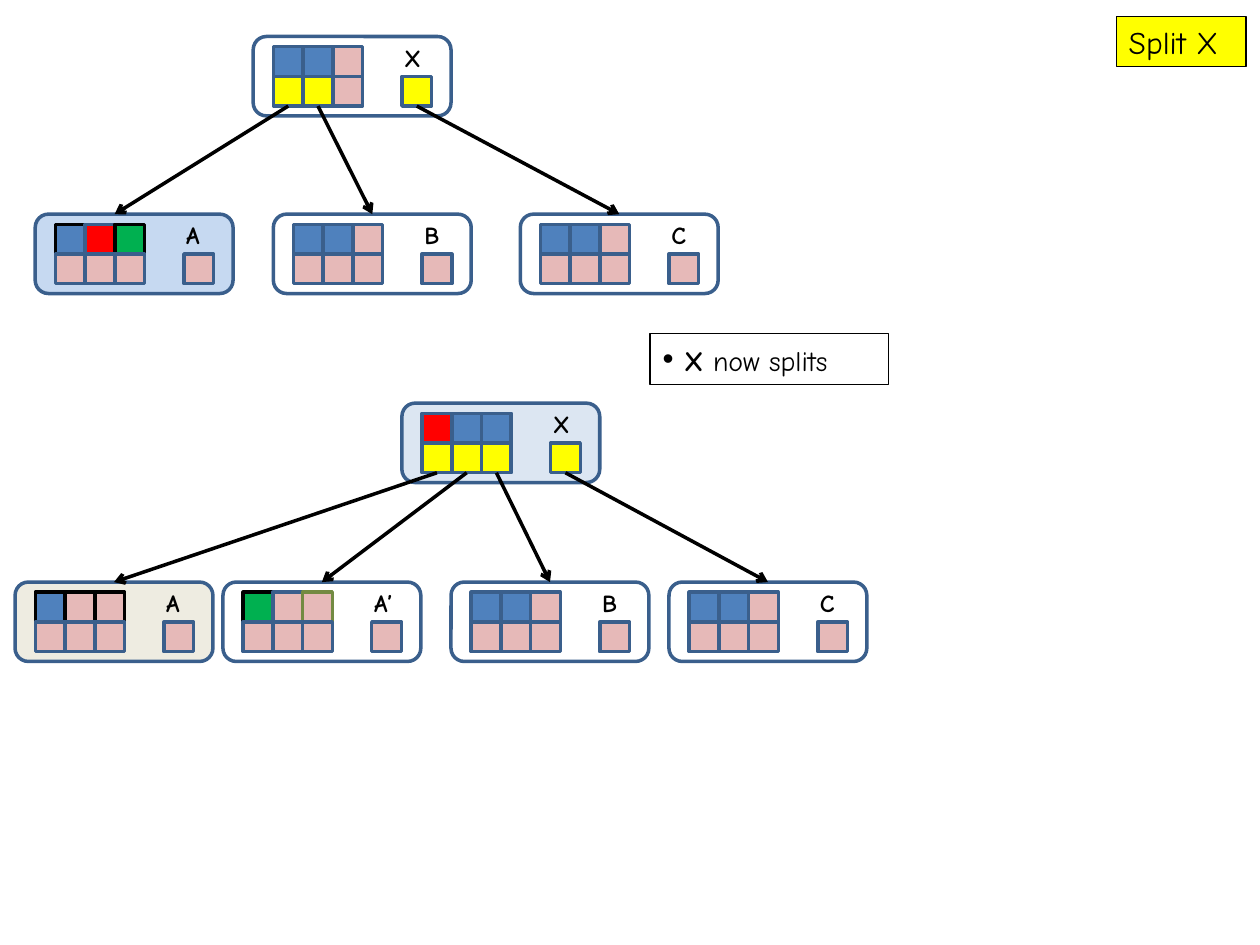
from lxml.etree import SubElement
from pptx import Presentation
from pptx.dml.color import RGBColor
from pptx.enum.shapes import MSO_CONNECTOR, MSO_SHAPE
from pptx.enum.text import MSO_AUTO_SIZE
from pptx.oxml.ns import qn
from pptx.util import Inches, Pt

FONT = "Comic Neue"
BLACK = RGBColor(0x00, 0x00, 0x00)
WHITE = RGBColor(0xFF, 0xFF, 0xFF)
OUTLINE = RGBColor(0x3A, 0x5F, 0x8C)
OLIVE = RGBColor(0x73, 0x8A, 0x42)
YELLOW = RGBColor(0xFF, 0xFF, 0x00)
RED = RGBColor(0xFF, 0x00, 0x00)
GREEN = RGBColor(0x00, 0xB0, 0x50)
BLUE = RGBColor(0x4F, 0x81, 0xBD)
PINK = RGBColor(0xE6, 0xB9, 0xB8)
PALE_BLUE = RGBColor(0xDC, 0xE6, 0xF2)
LIGHT_BLUE = RGBColor(0xC6, 0xD9, 0xF1)
CREAM = RGBColor(0xEE, 0xEC, 0xE1)

CELL = 0.236
NODE_WIDTH, NODE_HEIGHT = 1.57, 0.63
TOP, BOTTOM = 0, 2  # connection sites
ROOT_Y, LEAF_Y = 0.29, 1.7
SPLIT_ROOT_Y, SPLIT_LEAF_Y = 3.2, 4.62

LEAF_KEYS = (BLUE, BLUE, PINK)
EMPTY_ROW = (PINK,) * 3
PLAIN_EDGES = (OUTLINE,) * 3


def add_block(parent, kind, x, y, width, height, fill, edge=OUTLINE):
    block = parent.shapes.add_shape(
        kind, Inches(x), Inches(y), Inches(width), Inches(height))
    block.shadow.inherit = False
    if fill is None:
        block.fill.background()
    else:
        block.fill.solid()
        block.fill.fore_color.rgb = fill
    block.line.color.rgb = edge
    block.line.width = Pt(2)
    return block


def add_cell(parent, x, y, fill, edge=OUTLINE):
    return add_block(parent, MSO_SHAPE.RECTANGLE, x, y, CELL, CELL, fill, edge)


def add_text(parent, x, y, width, height, spans, wrap=False):
    """Add a text box; each span is (text, size, bold)."""
    box = parent.shapes.add_textbox(
        Inches(x), Inches(y), Inches(width), Inches(height))
    box.text_frame.word_wrap = wrap
    box.text_frame.auto_size = MSO_AUTO_SIZE.SHAPE_TO_FIT_TEXT
    for text, size, bold in spans:
        span = box.text_frame.paragraphs[0].add_run()
        span.text = text
        span.font.name = FONT
        span.font.size = Pt(size)
        span.font.bold = bold
        span.font.color.rgb = BLACK
    return box


def frame_box(box, fill):
    box.fill.solid()
    box.fill.fore_color.rgb = fill
    box.line.color.rgb = BLACK
    box.line.width = Pt(0.75)


def add_bullet(paragraph):
    properties = paragraph._p.get_or_add_pPr()
    SubElement(properties, qn("a:buFont"), typeface="Arial")
    SubElement(properties, qn("a:buChar"), char="•")


def add_node(page, name, x, y, keys=LEAF_KEYS, children=EMPTY_ROW,
             fill=None, edges=PLAIN_EDGES, label_width=0.34):
    """Add a tree node; return its outline and its four child pointer cells."""
    group = page.shapes.add_group_shape()
    outline = add_block(group, MSO_SHAPE.ROUNDED_RECTANGLE,
                        x, y, NODE_WIDTH, NODE_HEIGHT, fill)
    for column, (key, edge) in enumerate(zip(keys, edges)):
        add_cell(group, x + 0.16 + column * CELL, y + 0.08, key, edge)
    pointer_y = y + 0.08 + CELL
    pointers = [add_cell(group, x + 0.16 + column * CELL, pointer_y, child)
                for column, child in enumerate(children)]
    last_fill = YELLOW if YELLOW in children else PINK
    pointers.append(add_cell(group, x + 1.18, pointer_y, last_fill))
    add_text(group, x + 1.1, y, label_width, 0.34, [(name, 14, True)])
    return outline, pointers


def add_arrow(page, pointer, target=None, end=(0, 0)):
    """Point from a cell to the top of a target node, or to a free end."""
    arrow = page.shapes.add_connector(
        MSO_CONNECTOR.STRAIGHT, 0, 0, Inches(end[0]), Inches(end[1]))
    arrow.begin_connect(pointer, BOTTOM)
    if target is not None:
        arrow.end_connect(target, TOP)
    arrow.line.color.rgb = BLACK
    arrow.line.width = Pt(2)
    SubElement(arrow.line._get_or_add_ln(), qn("a:tailEnd"), type="arrow")
    SubElement(arrow._element.spPr, qn("a:effectLst"))


def add_tree_before_split(page):
    _, pointers = add_node(page, "X", 2.01, ROOT_Y, children=(YELLOW, YELLOW, PINK))
    add_node(page, "A", 0.28, LEAF_Y, keys=(BLUE, RED, GREEN),
             fill=LIGHT_BLUE, edges=(BLACK, OUTLINE, BLACK))
    leaf_b, _ = add_node(page, "B", 2.17, LEAF_Y)
    leaf_c, _ = add_node(page, "C", 4.13, LEAF_Y)
    add_arrow(page, pointers[0], end=(0.91, LEAF_Y))
    add_arrow(page, pointers[1], leaf_b)
    add_arrow(page, pointers[3], leaf_c)


def add_tree_after_split(page):
    _, pointers = add_node(page, "X", 3.19, SPLIT_ROOT_Y, keys=(RED, BLUE, BLUE),
                           children=(YELLOW,) * 3, fill=PALE_BLUE)
    leaves = [
        add_node(page, "A", 0.12, SPLIT_LEAF_Y, keys=(BLUE, PINK, PINK),
                 fill=CREAM, edges=(BLACK,) * 3),
        add_node(page, "A’", 1.77, SPLIT_LEAF_Y, keys=(GREEN, PINK, PINK),
                 edges=(BLACK, OUTLINE, OLIVE), label_width=0.39),
        add_node(page, "B", 3.58, SPLIT_LEAF_Y),
        add_node(page, "C", 5.31, SPLIT_LEAF_Y),
    ]
    for pointer, (leaf, _) in zip(pointers, leaves):
        add_arrow(page, pointer, leaf)


def main():
    deck = Presentation()
    deck.slide_width, deck.slide_height = Inches(10), Inches(7.5)
    page = deck.slides.add_slide(deck.slide_layouts[6])

    heading = add_text(page, 8.86, 0.13, 1.03, 0.4, [("Split X", 18, False)])
    frame_box(heading, YELLOW)
    add_tree_before_split(page)
    add_tree_after_split(page)
    remark = add_text(page, 5.16, 2.65, 1.89, 0.4,
                      [(" ", 18, False), ("X", 16, True), (" now splits", 16, False)],
                      wrap=True)
    frame_box(remark, WHITE)
    add_bullet(remark.text_frame.paragraphs[0])

    deck.save("out.pptx")


if __name__ == "__main__":
    main()
